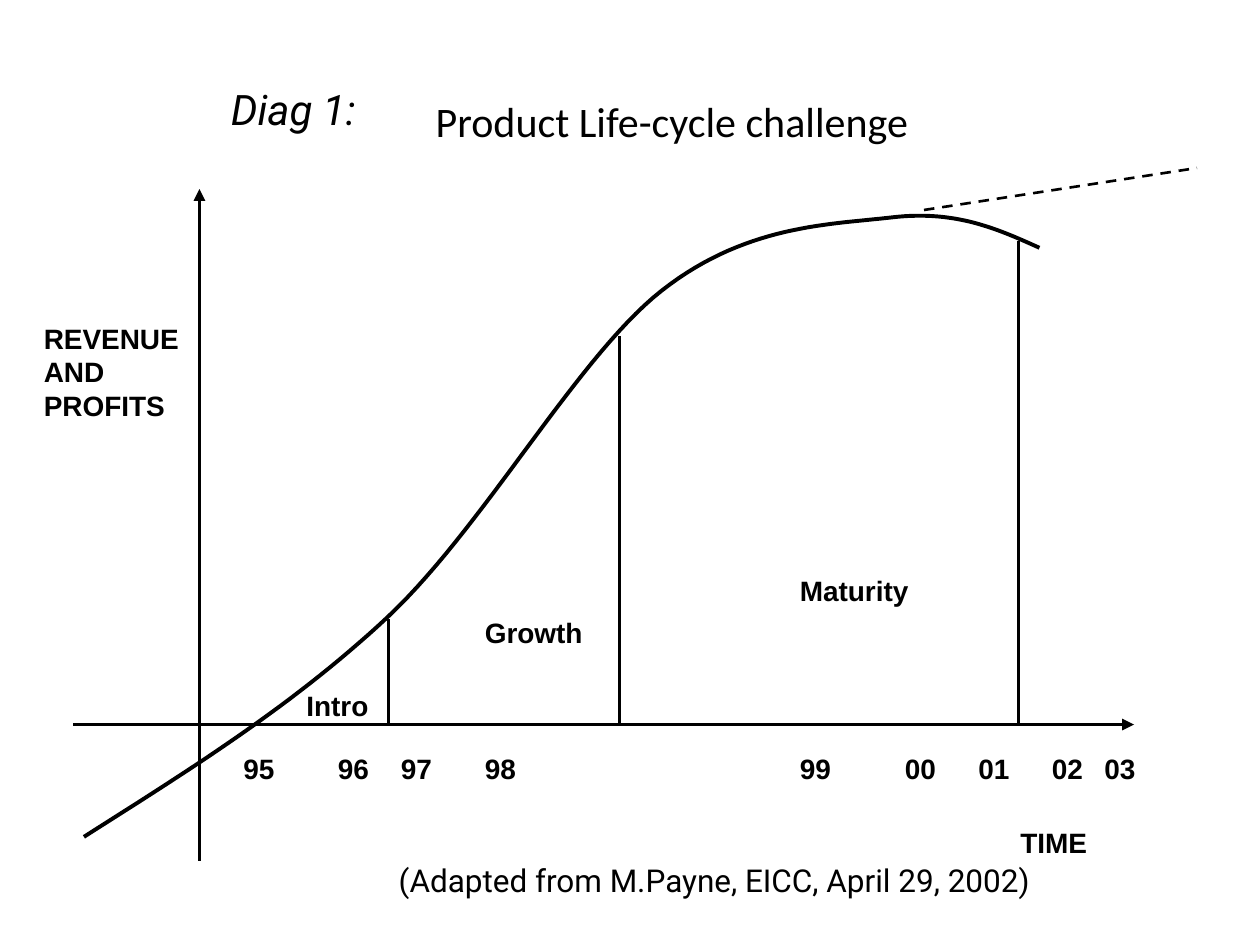
from lxml.etree import SubElement
from pptx import Presentation
from pptx.dml.color import RGBColor
from pptx.enum.dml import MSO_LINE
from pptx.enum.shapes import MSO_CONNECTOR
from pptx.enum.text import MSO_ANCHOR, MSO_AUTO_SIZE, PP_ALIGN
from pptx.oxml.ns import qn
from pptx.util import Inches, Pt

THEME = {
    "ink": RGBColor(0, 0, 0),
    "title": ("Calibri", 24),
    "figure": ("Roboto", 24),
    "credit": ("Roboto", 18),
    "label": ("Arial", 16),
    "stroke": 2.25,
    "thin": 1.5,
}

# The slide is a grid of 120 columns by 90 rows, twelve to the inch.
CELL = Inches(1) / 12
AXIS_ROW = 69
YEAR_ROW = 71
LABEL_HEIGHT = 4.4

prs = Presentation()
prs.slide_width = round(120 * CELL)
prs.slide_height = round(90 * CELL)
slide = prs.slides.add_slide(prs.slide_layouts[5])


def add_label(text, col, row, cols, rows=LABEL_HEIGHT, style="label",
              bold=False, italic=False, wrap=True):
    box = slide.shapes.add_textbox(*(round(n * CELL) for n in (col, row, cols, rows)))
    frame = box.text_frame
    frame.text = text
    frame.word_wrap = wrap
    frame.auto_size = MSO_AUTO_SIZE.SHAPE_TO_FIT_TEXT
    font = frame.paragraphs[0].runs[0].font
    font.name, size = THEME[style]
    font.size = Pt(size)
    font.bold, font.italic = bold, italic
    font.color.rgb = THEME["ink"]


def add_line(start, end, width=THEME["stroke"], dash=None, arrow=False):
    line = slide.shapes.add_connector(
        MSO_CONNECTOR.STRAIGHT, *(round(n * CELL) for n in (*start, *end)))
    line.line.color.rgb = THEME["ink"]
    line.line.width = Pt(width)
    if dash:
        line.line.dash_style = dash
    if arrow:
        SubElement(line.line._get_or_add_ln(), qn("a:tailEnd"), type="triangle")
    SubElement(line._element.spPr, qn("a:effectLst"))


# Title
title = slide.shapes.title
title.left, title.top, title.width, title.height = (
    round(n * CELL) for n in (20, 4, 88, 15))
title.text_frame.text = "Product Life-cycle challenge"
title.text_frame.vertical_anchor = MSO_ANCHOR.MIDDLE
heading = title.text_frame.paragraphs[0]
heading.alignment = PP_ALIGN.CENTER
heading_font = heading.runs[0].font
heading_font.name, heading_size = THEME["title"]
heading_font.size = Pt(heading_size)
heading_font.color.rgb = THEME["ink"]

# Axes
add_line((7, AXIS_ROW), (108, AXIS_ROW), arrow=True)
add_line((19, 82), (19, 18), arrow=True)
add_label("REVENUE AND PROFITS", 3, 30, 17, 16.2, bold=True)
add_label("TIME", 96, 78, 12, bold=True)

# Life-cycle curve, sampled from four cubic Bezier spans
knots = [(8, 79.7), (17.9, 73.4), (27.8, 67.3), (37, 58.7),
         (46.2, 50), (55, 34), (63, 27.7),
         (71, 21.4), (79, 21.4), (85, 20.7),
         (91, 20), (95, 21.8), (99, 23.6)]
STEPS = 30
curve = []
for first in range(0, len(knots) - 1, 3):
    span = knots[first:first + 4]
    for step in range(1, STEPS + 1):
        t = step / STEPS
        weights = ((1 - t) ** 3, 3 * t * (1 - t) ** 2, 3 * t ** 2 * (1 - t), t ** 3)
        curve.append(tuple(
            CELL * sum(w * knot[axis] for w, knot in zip(weights, span))
            for axis in (0, 1)))
builder = slide.shapes.build_freeform(knots[0][0] * CELL, knots[0][1] * CELL)
builder.add_line_segments(curve, close=False)
life_cycle = builder.convert_to_shape()
life_cycle.shadow.inherit = False
life_cycle.fill.background()
life_cycle.line.color.rgb = THEME["ink"]
life_cycle.line.width = Pt(THEME["stroke"])

# Phases and the lines that close them
for phase, col, row, cols in [("Intro", 28, 65, 9), ("Growth", 45, 58, 12),
                              ("Maturity", 75, 54, 14)]:
    add_label(phase, col, row, cols, bold=True)
for col, top in [(37, 59), (59, 32), (97, 23)]:
    add_line((col, top), (col, AXIS_ROW))
add_line((88, 20), (114, 16), THEME["thin"], dash=MSO_LINE.DASH)

# Years
for year, col in [("95", 22), ("96", 31), ("97", 37), ("98", 45), ("99", 75),
                  ("00", 85), ("01", 92), ("02", 99), ("03", 104)]:
    add_label(year, col, YEAR_ROW, 5.4, bold=True, wrap=False)

# Figure number and credit
add_label("Diag 1:", 20.8, 7.4, 16.4, 6, "figure", italic=True, wrap=False)
add_label("(Adapted from M.Payne, EICC, April 29, 2002)",
          36.8, 81.4, 63.6, 4.8, "credit", wrap=False)

prs.save("out.pptx")
